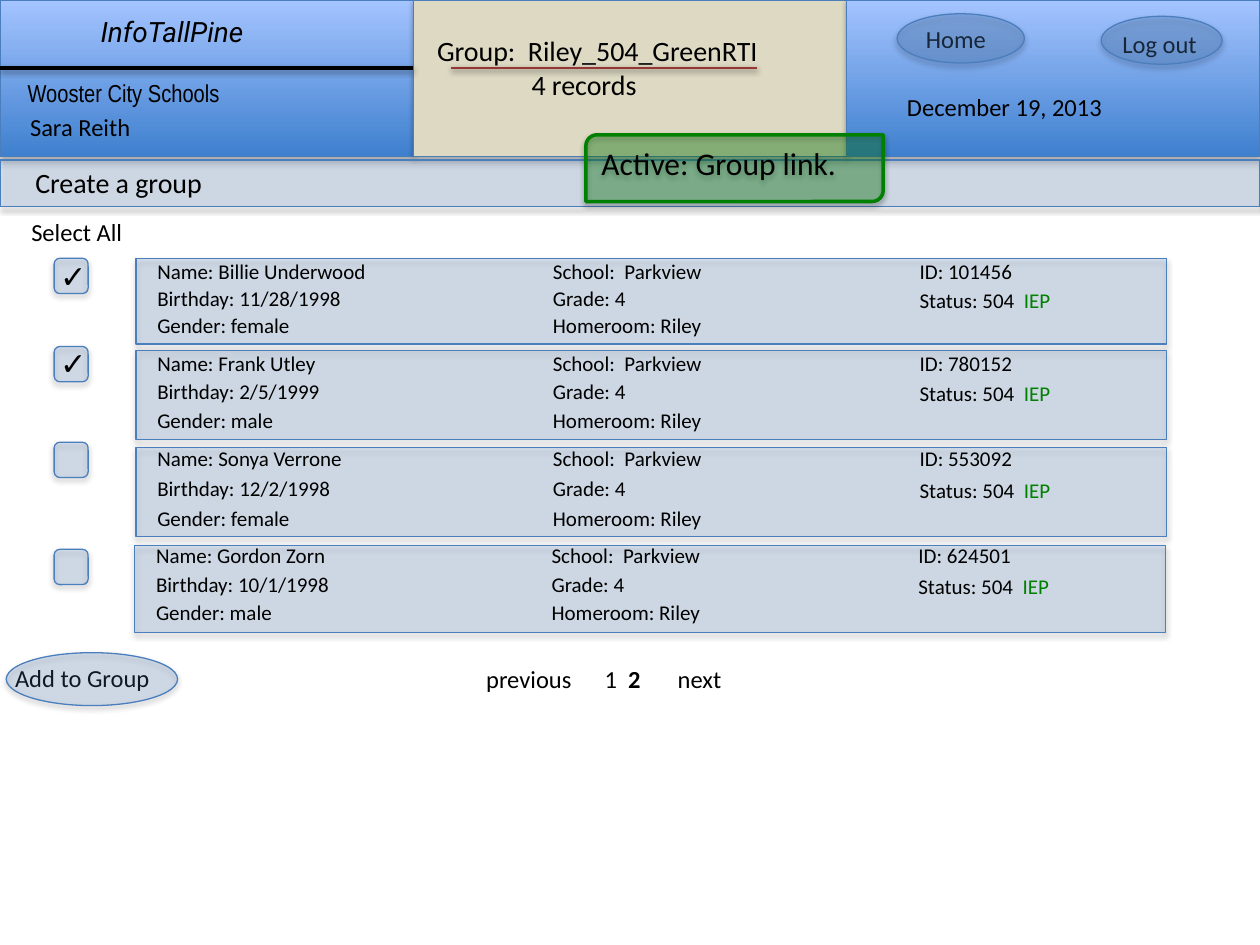
from lxml.etree import SubElement
from pptx import Presentation
from pptx.dml.color import RGBColor as RGB
from pptx.enum.shapes import MSO_CONNECTOR as LINE, MSO_SHAPE as KIND
from pptx.enum.text import MSO_ANCHOR as ANCHOR, MSO_AUTO_SIZE as FIT, PP_ALIGN as ALIGN
from pptx.oxml.ns import qn
from pptx.util import Inches, Pt

COLOURS = {"ink": "000000", "edge": "4B7EBC", "tint": "4F81BD", "deep": "3F80CE",
           "sky": "A4C4FF", "sand": "DDD9C3", "green": "008000", "wine": "953735"}
COLUMNS, ROWS = 100, 75
FIELD_COLUMNS = (0.7, 32.1, 61.2)
FIELD_WIDTHS = (29.4, 21.7, 17.8)
RECORDS = [
    ("Billie Underwood", "11/28/1998", "female", "101456", 10.8, 20.5, 6.8, 20, 2.15),
    ("Frank Utley", "2/5/1999", "male", "780152", 10.8, 27.8, 7.1, 27.3, 2.28),
    ("Sonya Verrone", "12/2/1998", "female", "553092", 10.8, 35.5, 7.1, 34.9, 2.35),
    ("Gordon Zorn", "10/1/1998", "male", "624501", 10.7, 43.3, 6.9, 42.6, 2.25),
]
CHECKBOXES = [(20.5, 19.9), (27.5, 26.8), (35.1, None), (43.6, None)]


class Screen:
    """Draws styled elements on one slide, measured in grid columns and rows."""

    def __init__(self, deck):
        self.width, self.height = deck.slide_width, deck.slide_height
        self.slide = deck.slides.add_slide(deck.slide_layouts[5])
        self.shapes = self.slide.shapes

    def place(self, left, top, width, height):
        across, down = self.width / COLUMNS, self.height / ROWS
        return [int(left * across), int(top * down), int(width * across), int(height * down)]

    def open_group(self):
        self.shapes = self.slide.shapes.add_group_shape().shapes

    def close_group(self):
        self.shapes = self.slide.shapes

    def cast_shadow(self, item, strength, distance):
        effects = SubElement(item._element.spPr, qn("a:effectLst"))
        shadow = SubElement(effects, qn("a:outerShdw"), blurRad=str(Pt(3.15)),
                            dist=str(Pt(distance)), dir="5400000", rotWithShape="0")
        black = SubElement(shadow, qn("a:srgbClr"), val=COLOURS["ink"])
        SubElement(black, qn("a:alpha"), val=str(strength * 1000))

    def format(self, run, size, font="Calibri", colour="ink", **emphasis):
        run.font.size, run.font.name = Pt(size), font
        run.font.color.rgb = RGB.from_string(COLOURS[colour])
        run.font.bold = emphasis.get("bold", False)
        run.font.italic = emphasis.get("italic", False)

    def panel(self, kind, box, fill="tint", opacity=100, edge="edge", weight=0.75):
        panel = self.shapes.add_shape(kind, *self.place(*box))
        if isinstance(fill, tuple):
            panel.fill.gradient()
            panel.fill.gradient_angle = 90
            for stop, colour in zip(panel.fill.gradient_stops, fill):
                stop.color.rgb = RGB.from_string(COLOURS[colour])
        else:
            panel.fill.solid()
            panel.fill.fore_color.rgb = RGB.from_string(COLOURS[fill])
            if opacity < 100:
                colour = panel._element.spPr.find(".//" + qn("a:srgbClr"))
                SubElement(colour, qn("a:alpha"), val=str(opacity * 1000))
        panel.line.color.rgb = RGB.from_string(COLOURS[edge])
        panel.line.width = Pt(weight)
        self.cast_shadow(panel, 35, 1.8)
        return panel

    def rule(self, start, end, row, colour, weight):
        left, top, length, _ = self.place(start, row, end - start, 0)
        rule = self.shapes.add_connector(LINE.STRAIGHT, left, top, left + length, top)
        rule.line.color.rgb = RGB.from_string(COLOURS[colour])
        rule.line.width = Pt(weight)
        self.cast_shadow(rule, 38, 1.6)

    def label(self, words, box, size=14, wrap=True, inset=True, tail=None, **look):
        label = self.shapes.add_textbox(*self.place(*box))
        frame = label.text_frame
        frame.word_wrap = wrap
        if not inset:
            frame.margin_left = frame.margin_right = frame.margin_top = frame.margin_bottom = 0
        frame.text = words
        for paragraph in frame.paragraphs:
            self.format(paragraph.runs[0], size, **look)
        if tail:
            ending, ending_look = tail
            run = frame.paragraphs[0].add_run()
            run.text = ending
            self.format(run, size, **ending_look)
        return label

    def heading(self, words, box, size):
        heading = self.slide.shapes.title
        heading.left, heading.top, heading.width, heading.height = self.place(*box)
        frame = heading.text_frame
        frame.text = words
        frame.auto_size, frame.vertical_anchor = FIT.NONE, ANCHOR.TOP
        frame.paragraphs[0].alignment = ALIGN.LEFT
        self.format(frame.paragraphs[0].runs[0], size)
        self.slide.shapes._spTree.append(heading._element)

    def button(self, words, box, oval, opacity, **look):
        self.open_group()
        self.label(words, box, **look)
        self.panel(KIND.OVAL, oval, opacity=opacity)
        self.close_group()

    def record(self, name, birthday, gender, number, left, top, height, first, step):
        fields = [
            (f"Name: {name}", f"Birthday: {birthday}", f"Gender: {gender}"),
            ("School:  Parkview", "Grade: 4", "Homeroom: Riley"),
            (f"ID: {number}", "Status: 504  "),
        ]
        self.open_group()
        self.panel(KIND.RECTANGLE, (left, top, 81.8, height), opacity=20)
        for column, width, entries in zip(FIELD_COLUMNS, FIELD_WIDTHS, fields):
            for line, words in enumerate(entries):
                status = words.startswith("Status")
                row = first + line * step + (0.15 if status else 0)
                self.label(words, (left + column, row, width, 3), 12,
                           tail=("IEP", {"colour": "green"}) if status else None)
        self.close_group()


def main():
    deck = Presentation()
    deck.slide_width, deck.slide_height = Inches(10), Inches(7.5)
    screen = Screen(deck)

    for left, width, fill in [(0, 32.8, ("deep", "sky")), (32.8, 34.4, "sand"),
                              (67.2, 32.8, ("deep", "sky"))]:
        screen.panel(KIND.RECTANGLE, (left, 0, width, 12.4), fill)
    screen.label("Sara Reith", (1.4, 8.4, 13.7, 3.4))
    screen.label("December 19, 2013", (71, 6.8, 18.7, 3.4))
    screen.button("Log out", (88.1, 1.8, 9, 3.4), (87.4, 1.3, 9.6, 3.8), 30)
    screen.button("Home", (72.5, 1.4, 7.8, 3.4), (71.2, 1.1, 10.1, 3.9), 30)
    screen.label("Wooster City Schools", (1.2, 5.7, 18.9, 3.4), font="Arial Narrow")
    screen.label("InfoTallPine", (7, 0.7, 18.9, 3.7), 16, font="Roboto", italic=True)
    screen.rule(0, 32.8, 5.4, "ink", 2)

    screen.panel(KIND.RECTANGLE, (0, 12.7, 100, 3.7), opacity=20)
    screen.label("Select All", (1.5, 16.7, 9.3, 3.4), wrap=False)
    for record in RECORDS:
        screen.record(*record)
    for box_row, tick_row in CHECKBOXES:
        screen.panel(KIND.ROUNDED_RECTANGLE, (4.3, box_row, 2.7, 2.8), opacity=20)
        if tick_row:
            screen.label("✓", (3.8, tick_row, 4, 4), 18, wrap=False, font="Arial")

    screen.button("Add to Group", (1.2, 52.6, 12.4, 2.7), (0.5, 51.8, 13.6, 4.2), 20,
                  wrap=False, inset=False)
    screen.label("previous", (37.6, 52.2, 8.9, 3.4), wrap=False)
    screen.label("1  ", (47, 52.2, 4.9, 3.4), wrap=False, tail=("2", {"bold": True}))
    screen.label("next", (52.8, 52.2, 5.5, 3.4), wrap=False)

    summary = screen.label("Group:  Riley_504_GreenRTI\n4 records", (33.7, 2.2, 30.8, 6.4), 16)
    count = summary.text_frame.paragraphs[1]
    count._p.get_or_add_pPr().set("marL", str(Inches(0.75)))
    screen.rule(35.8, 60.1, 5.4, "wine", 1.5)
    screen.heading("Create a group", (1.8, 12.6, 17.6, 3.7), 16)

    active = screen.panel(KIND.ROUND_2_DIAG_RECTANGLE, (46.5, 10.7, 23.6, 5.3),
                          "green", 32, "green", 2)
    active.text_frame.text = "Active: Group link."
    active.text_frame.vertical_anchor = ANCHOR.TOP
    notice = active.text_frame.paragraphs[0]
    notice.alignment, notice.space_after = ALIGN.LEFT, Pt(6)
    screen.format(notice.runs[0], 18)

    deck.save("out.pptx")


if __name__ == "__main__":
    main()
